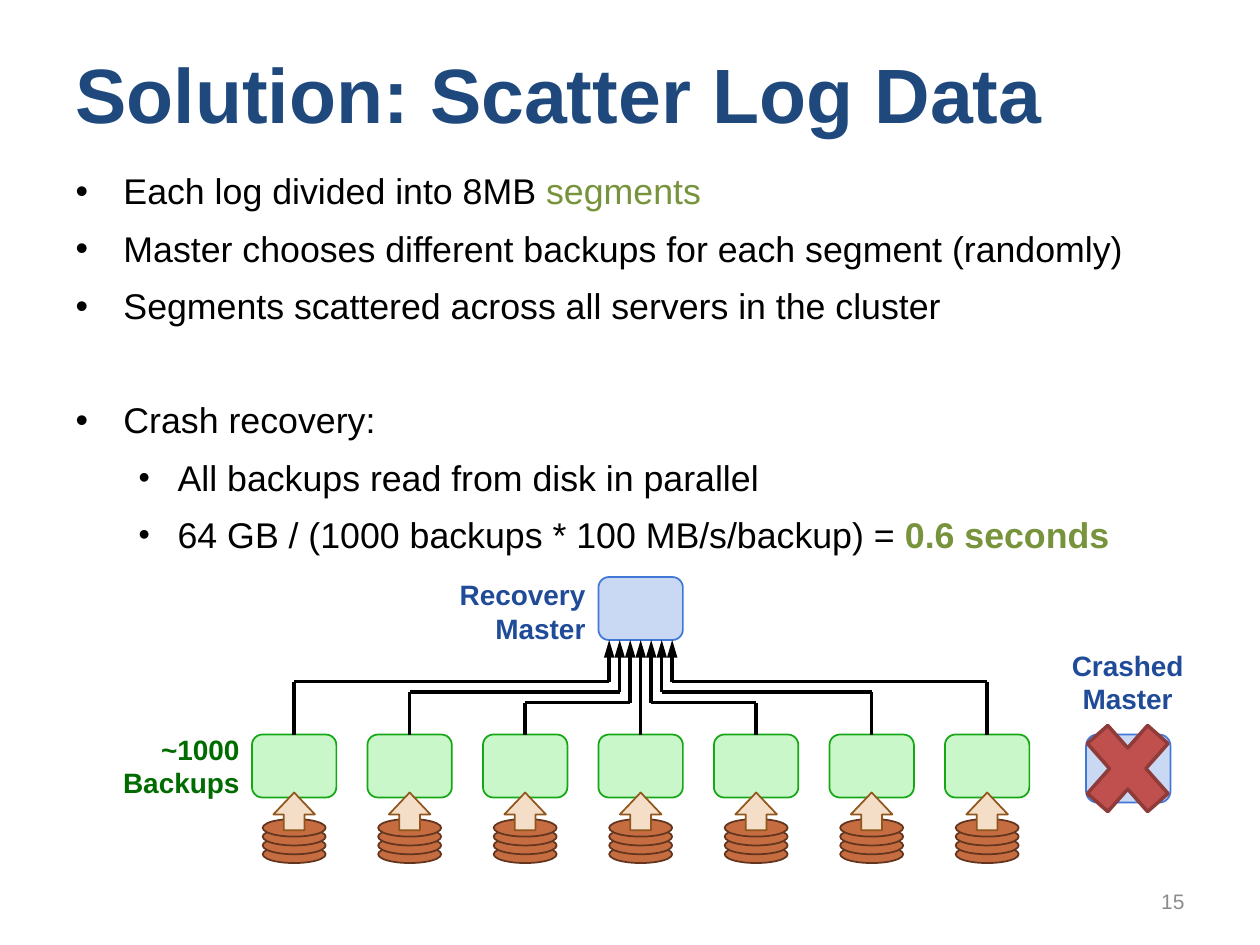
from lxml.etree import SubElement
from pptx import Presentation
from pptx.dml.color import RGBColor
from pptx.enum.shapes import MSO_CONNECTOR, MSO_SHAPE
from pptx.enum.text import MSO_ANCHOR, MSO_AUTO_SIZE, PP_ALIGN
from pptx.oxml.ns import qn
from pptx.util import Inches, Pt

FONT = "Arial"
NAVY, GREEN, BLACK = "1F497D", "77933C", "000000"
MASTER_TEXT, BACKUP_TEXT = "204B98", "006C00"
MASTER = ("C9D8F3", "4177D7")
BACKUP = ("C9F7C9", "15A715")
DISK = ("C56D41", "64351E")
READ_ARROW = ("F4DEC8", "90561C")
CROSS = ("C0504D", "8E3B39")
NODE_WIDTH, NODE_HEIGHT = 0.67, 0.5
BACKUP_STEP = 11 / 12
LANE_STEP = 1 / 12


def color(value):
    return RGBColor.from_string(value)


def place(shape, box):
    shape.left, shape.top, shape.width, shape.height = map(Inches, box)


def set_font(font, size, value, bold=False):
    font.name = FONT
    font.size = Pt(size)
    font.bold = bold
    font.color.rgb = color(value)


def add_block(shapes, kind, box, colors, width=1):
    shape = shapes.add_shape(kind, *map(Inches, box))
    fill, line = colors
    shape.shadow.inherit = False
    shape.fill.solid()
    shape.fill.fore_color.rgb = color(fill)
    shape.line.color.rgb = color(line)
    shape.line.width = Pt(width)
    return shape


def add_label(shapes, box, text, size, value, alignment, bold=True):
    label = shapes.add_textbox(*map(Inches, box))
    frame = label.text_frame
    frame.word_wrap = False
    frame.vertical_anchor = MSO_ANCHOR.MIDDLE
    frame.text = text
    for paragraph in frame.paragraphs:
        paragraph.alignment = alignment
        set_font(paragraph.font, size, value, bold)


def add_line(shapes, start, end, arrow=False):
    line = shapes.add_connector(MSO_CONNECTOR.STRAIGHT, *map(Inches, start + end))
    line.line.color.rgb = color(BLACK)
    line.line.width = Pt(2)
    if arrow:
        SubElement(line.line._get_or_add_ln(), qn("a:tailEnd"), type="triangle", len="lg")
    SubElement(line._element.spPr, qn("a:effectLst"))


def set_bullet(paragraph, level):
    margin, hang, size = ((0.38, 0.38, 100), (0.81, 0.31, 90))[level]
    paragraph.level = level
    properties = paragraph._p.get_or_add_pPr()
    properties.set("marL", str(Inches(margin)))
    properties.set("indent", str(-Inches(hang)))
    SubElement(properties, qn("a:buSzPct"), val=str(size * 1000))
    SubElement(properties, qn("a:buFont"), typeface=FONT)
    SubElement(properties, qn("a:buChar"), char="•")


def fill_title(title, box):
    place(title, box)
    frame = title.text_frame
    frame.auto_size = MSO_AUTO_SIZE.NONE
    frame.vertical_anchor = MSO_ANCHOR.MIDDLE
    frame.text = "Solution: Scatter Log Data"
    paragraph = frame.paragraphs[0]
    paragraph.alignment = PP_ALIGN.LEFT
    set_font(paragraph.font, 44, NAVY, True)


def fill_body(body, box):
    items = [
        (0, 4.8, "Each log divided into 8MB ", "segments", False),
        (0, 4.8, "Master chooses different backups for each segment (randomly)", "", False),
        (0, 4.8, "Segments scattered across all servers in the cluster", "", False),
        (0, 37, "Crash recovery:", "", False),
        (1, 4.8, "All backups read from disk in parallel", "", False),
        (1, 4.8, "64 GB / (1000 backups * 100 MB/s/backup) = ", "0.6 seconds", True),
    ]
    place(body, box)
    frame = body.text_frame
    frame.auto_size = MSO_AUTO_SIZE.NONE
    for index, (level, before, text, highlight, bold) in enumerate(items):
        paragraph = frame.add_paragraph() if index else frame.paragraphs[0]
        paragraph.line_spacing = 0.9
        paragraph.space_before = Pt(before)
        paragraph.space_after = Pt(6)
        set_bullet(paragraph, level)
        set_font(paragraph.font, 20.4, BLACK)
        paragraph.add_run().text = text
        if highlight:
            run = paragraph.add_run()
            run.text = highlight
            run.font.bold = bold
            run.font.color.rgb = color(GREEN)


def add_backup(shapes, center, top):
    group = shapes.add_group_shape().shapes
    for level in range(4):
        disk_top = top + 0.88 - level * 0.07
        add_block(group, MSO_SHAPE.OVAL, (center - 0.25, disk_top, 0.5, 0.14), DISK)
    node_box = (center - NODE_WIDTH / 2, top, NODE_WIDTH, NODE_HEIGHT)
    add_block(group, MSO_SHAPE.ROUNDED_RECTANGLE, node_box, BACKUP)
    arrow_box = (center - 0.165, top + 0.46, 0.33, 0.3)
    arrow = add_block(group, MSO_SHAPE.UP_ARROW, arrow_box, READ_ARROW)
    arrow.adjustments[1] = 0.58


def add_route(shapes, center, offset, bottom, top):
    start = center + offset * BACKUP_STEP
    end = center + offset * LANE_STEP
    lane = bottom - 0.17 - abs(offset) * LANE_STEP
    if offset:
        add_line(shapes, (start, bottom), (start, lane))
        add_line(shapes, (start, lane), (end, lane))
    add_line(shapes, (end, lane if offset else bottom), (end, top), arrow=True)


def add_recovery(shapes, box):
    left, top, width, height = box
    center = left + width / 2
    backup_top = top + 1.25
    master_box = (center - NODE_WIDTH / 2, top, NODE_WIDTH, NODE_HEIGHT)
    add_block(shapes, MSO_SHAPE.ROUNDED_RECTANGLE, master_box, MASTER)
    add_label(shapes, (center - 1.55, top - 0.05, 1.21, 0.64), "Recovery\vMaster",
              16, MASTER_TEXT, PP_ALIGN.RIGHT)
    add_label(shapes, (left - 1.13, backup_top - 0.07, 1.13, 0.64), "~1000\vBackups",
              16, BACKUP_TEXT, PP_ALIGN.RIGHT)
    for offset in range(-3, 4):
        add_backup(shapes, center + offset * BACKUP_STEP, backup_top)
        add_route(shapes, center, offset, backup_top, top + NODE_HEIGHT)


def add_crashed_master(shapes, box):
    left, top, width, height = box
    group = shapes.add_group_shape().shapes
    add_label(group, (left, top, width, 0.64), "Crashed\nMaster",
              16, MASTER_TEXT, PP_ALIGN.CENTER)
    node_box = (left + 0.22, top + 0.74, NODE_WIDTH, 0.54)
    add_block(group, MSO_SHAPE.ROUNDED_RECTANGLE, node_box, MASTER)
    cross_box = (left + 0.09, top + 0.49, 0.92, 1.04)
    add_block(group, MSO_SHAPE.MATH_MULTIPLY, cross_box, CROSS, 2)


def main():
    presentation = Presentation()
    presentation.slide_width = Inches(10)
    presentation.slide_height = Inches(7.5)
    slide = presentation.slides.add_slide(presentation.slide_layouts[1])
    shapes = slide.shapes
    fill_title(shapes.title, (0.5, 0.3, 9, 0.87))
    fill_body(slide.placeholders[1], (0.5, 1.33, 9, 3.33))
    add_recovery(shapes, (2, 4.58, 6.17, 2.27))
    add_crashed_master(shapes, (8.4, 5.09, 1.1, 1.53))
    add_label(shapes, (7.17, 6.95, 2.33, 0.4), "15", 12, "8C8C8C", PP_ALIGN.RIGHT, False)
    presentation.save("out.pptx")


if __name__ == "__main__":
    main()
